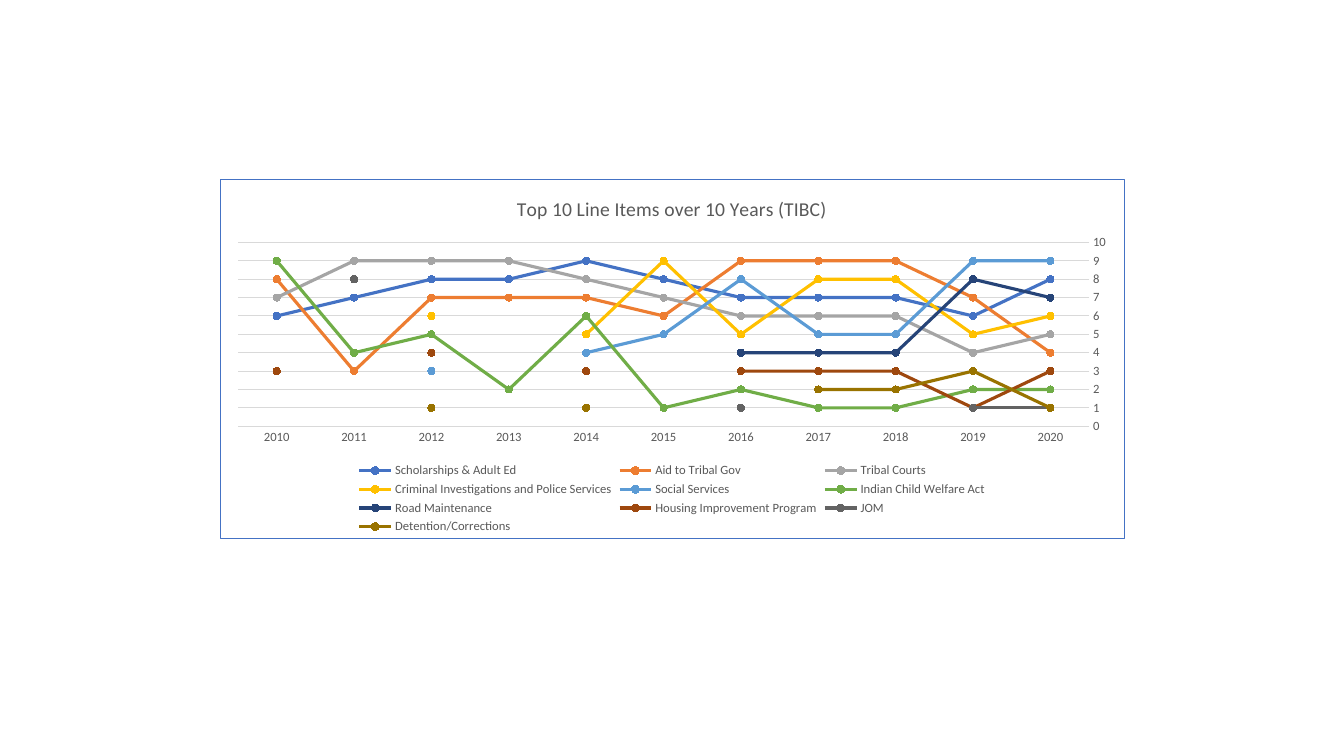
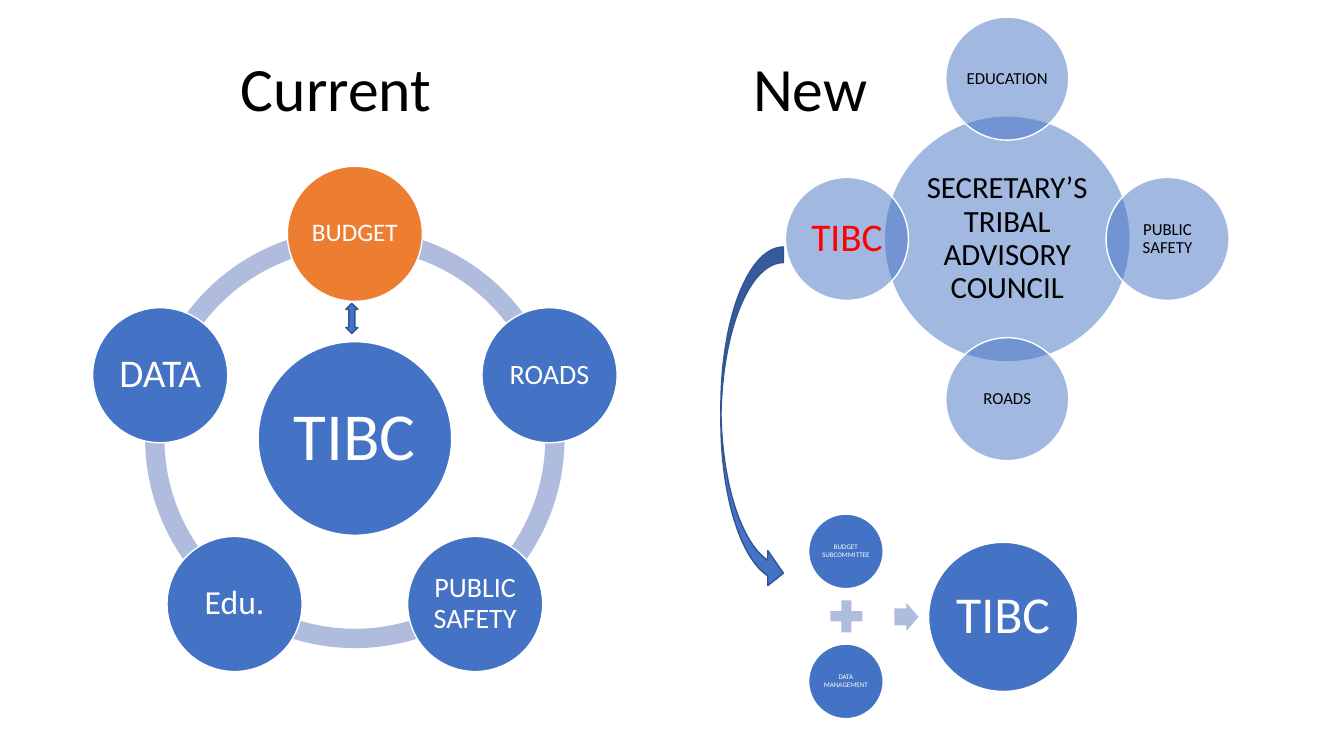
import math
import lxml.etree
import pptx
import pptx.chart.data
import pptx.dml.color
import pptx.enum.chart
import pptx.enum.shapes
import pptx.enum.text
import pptx.oxml
import pptx.oxml.ns
import pptx.util

Inches = pptx.util.Inches
Pt = pptx.util.Pt
RGBColor = pptx.dml.color.RGBColor
MSO_SHAPE = pptx.enum.shapes.MSO_SHAPE
qn = pptx.oxml.ns.qn

FONT = "Calibri"
WHITE = RGBColor(0xFF, 0xFF, 0xFF)
BLACK = RGBColor(0x00, 0x00, 0x00)
RED = RGBColor(0xFF, 0x00, 0x00)
BLUE = RGBColor(0x44, 0x72, 0xC4)
DARK_BLUE = RGBColor(0x32, 0x54, 0x91)
PALE_BLUE = RGBColor(0xB0, 0xBC, 0xDE)
ORANGE = RGBColor(0xED, 0x7D, 0x31)
GRAY = RGBColor(0xA5, 0xA5, 0xA5)
GOLD = RGBColor(0xFF, 0xC0, 0x00)
SKY = RGBColor(0x5B, 0x9B, 0xD5)
GREEN = RGBColor(0x70, 0xAD, 0x47)
NAVY = RGBColor(0x26, 0x44, 0x78)
BROWN = RGBColor(0x9E, 0x48, 0x0E)
DARK_GRAY = RGBColor(0x63, 0x63, 0x63)
OLIVE = RGBColor(0x99, 0x73, 0x00)
TEXT_GRAY = RGBColor(0x59, 0x59, 0x59)
GRID_GRAY = RGBColor(0xD9, 0xD9, 0xD9)


def add_shape(shapes, kind, left, top, width, height, fill, line=None, adj=()):
    sp = shapes.add_shape(kind, Inches(left), Inches(top), Inches(width), Inches(height))
    sp.shadow.inherit = False
    sp.fill.solid()
    sp.fill.fore_color.rgb = fill
    if line is None:
        sp.line.fill.background()
    else:
        sp.line.color.rgb = line
        sp.line.width = Pt(1)
    for i, value in enumerate(adj):
        sp.adjustments[i] = value
    return sp


def add_circle(shapes, cx, cy, d, text, size, inset, color=WHITE, fill=BLUE, alpha=None):
    sp = add_shape(shapes, MSO_SHAPE.OVAL, cx - d / 2, cy - d / 2, d, d, fill, WHITE)
    if alpha is not None:
        clr = sp._element.spPr.find(qn("a:solidFill")).find(qn("a:srgbClr"))
        lxml.etree.SubElement(clr, qn("a:alpha")).set("val", str(alpha * 1000))
    tf = sp.text_frame
    tf.word_wrap = True
    tf.vertical_anchor = pptx.enum.text.MSO_ANCHOR.MIDDLE
    tf.margin_left = tf.margin_right = tf.margin_top = tf.margin_bottom = Inches(inset)
    p = tf.paragraphs[0]
    p.text = text
    p.alignment = pptx.enum.text.PP_ALIGN.CENTER
    p.line_spacing = 0.9
    p.font.name = FONT
    p.font.size = Pt(size)
    p.font.color.rgb = color


prs = pptx.Presentation()
prs.slide_width = Inches(13.33)
prs.slide_height = Inches(7.5)

# Slide 1: line chart
s = prs.slides.add_slide(prs.slide_layouts[6])
series_rows = [
    ("Scholarships & Adult Ed", BLUE, (8, 6, 7, 7, 7, 8, 9, 8, 8, 7, 6)),
    ("Aid to Tribal Gov", ORANGE, (4, 7, 9, 9, 9, 6, 7, 7, 7, 3, 8)),
    ("Tribal Courts", GRAY, (5, 4, 6, 6, 6, 7, 8, 9, 9, 9, 7)),
    ("Criminal Investigations and Police Services", GOLD,
     (6, 5, 8, 8, 5, 9, 5, None, 6, None, None)),
    ("Social Services", SKY, (9, 9, 5, 5, 8, 5, 4, None, 3, None, None)),
    ("Indian Child Welfare Act", GREEN, (2, 2, 1, 1, 2, 1, 6, 2, 5, 4, 9)),
    ("Road Maintenance", NAVY, (7, 8, 4, 4, 4, None, 1, None, None, None, None)),
    ("Housing Improvement Program", BROWN, (3, 1, 3, 3, 3, None, 3, None, 4, None, 3)),
    ("JOM", DARK_GRAY, (1, 1, None, None, 1, None, None, None, None, 8, None)),
    ("Detention/Corrections", OLIVE, (1, 3, 2, 2, None, None, 1, None, 1, None, None)),
]
data = pptx.chart.data.CategoryChartData()
data.categories = [str(year) for year in range(2020, 2009, -1)]
for name, color, values in series_rows:
    data.add_series(name, values)
chart = s.shapes.add_chart(
    pptx.enum.chart.XL_CHART_TYPE.LINE_MARKERS,
    Inches(2.18), Inches(1.78), Inches(8.97), Inches(3.56), data).chart
chart.font.name = FONT
chart.font.size = Pt(10)

chart.has_title = True
p = chart.chart_title.text_frame.paragraphs[0]
p.text = "Top 10 Line Items over 10 Years (TIBC)"
p.font.size = Pt(14)
p.font.bold = False
p.font.name = FONT
p.font.color.rgb = TEXT_GRAY
chart.chart_title.include_in_layout = False

chart.has_legend = True
chart.legend.position = pptx.enum.chart.XL_LEGEND_POSITION.BOTTOM
chart.legend.include_in_layout = False

# Axes: years run backwards, so the value axis sits on the right
cat_axis, val_axis = chart.category_axis, chart.value_axis
cat_axis.reverse_order = True
cat_axis.format.line.color.rgb = GRID_GRAY
cat_axis.format.line.width = Pt(0.75)
val_axis.minimum_scale = 0
val_axis.maximum_scale = 10
val_axis.major_unit = 1
val_axis.format.line.fill.background()
val_axis.major_gridlines.format.line.color.rgb = GRID_GRAY
val_axis.major_gridlines.format.line.width = Pt(0.75)
for axis in (cat_axis, val_axis):
    axis.major_tick_mark = pptx.enum.chart.XL_TICK_MARK.NONE
for font in (cat_axis.tick_labels.font, val_axis.tick_labels.font, chart.legend.font):
    font.name = FONT
    font.size = Pt(9)
    font.color.rgb = TEXT_GRAY

chart.plots[0].vary_by_categories = False
for ser, (name, color, values) in zip(chart.plots[0].series, series_rows):
    ser.smooth = False
    ser.format.line.color.rgb = color
    ser.format.line.width = Pt(2.25)
    ser.marker.style = pptx.enum.chart.XL_MARKER_STYLE.CIRCLE
    ser.marker.size = 5
    ser.marker.format.fill.solid()
    ser.marker.format.fill.fore_color.rgb = color
    ser.marker.format.line.color.rgb = color

# Chart background and border
frame = pptx.oxml.parse_xml(
    '<c:spPr xmlns:c="http://schemas.openxmlformats.org/drawingml/2006/chart" '
    'xmlns:a="http://schemas.openxmlformats.org/drawingml/2006/main">'
    f'<a:solidFill><a:srgbClr val="{WHITE}"/></a:solidFill>'
    f'<a:ln w="{Pt(0.25)}"><a:solidFill><a:srgbClr val="{BLUE}"/></a:solidFill></a:ln>'
    '</c:spPr>')
chart._chartSpace.find(qn("c:chart")).addnext(frame)

# Slide 2: current and new structure
s = prs.slides.add_slide(prs.slide_layouts[5])

# Current: five nodes on a ring around the council
ring = s.shapes.add_group_shape().shapes
ring_x, ring_y, ring_d, node_radius = 3.52, 4.35, 4.16, 2.03
nodes = [
    ("BUDGET", 18, 0.03, ORANGE),
    ("ROADS", 20, 0.03, BLUE),
    ("PUBLIC SAFETY", 20, 0.03, BLUE),
    ("Edu.", 24, 0.03, BLUE),
    ("DATA", 28, 0.04, BLUE),
]
angles = [(270 + 72 * i) % 360 for i in range(len(nodes))]
for angle in angles:
    # Adjustments count 60000ths of a degree in units of 100000
    add_shape(ring, MSO_SHAPE.BLOCK_ARC, ring_x - ring_d / 2, ring_y - ring_d / 2,
              ring_d, ring_d, PALE_BLUE,
              adj=(angle * 0.6, (angle + 72) % 360 * 0.6, 0.046))
add_circle(ring, ring_x, ring_y, 1.92, "TIBC", 48, 0.07)
for angle, (text, size, inset, fill) in zip(angles, nodes):
    add_circle(ring, ring_x + node_radius * math.cos(math.radians(angle)),
               ring_y + node_radius * math.sin(math.radians(angle)),
               1.34, text, size, inset, fill=fill)
add_shape(s.shapes, MSO_SHAPE.UP_DOWN_ARROW, 3.43, 3.01, 0.12, 0.3, BLUE, DARK_BLUE)

# New: advisory council with four overlapping circles
hub = s.shapes.add_group_shape().shapes
hub_x, hub_y, reach = 9.99, 2.37, 1.59
add_circle(hub, hub_x, hub_y, 2.44, "SECRETARY’S TRIBAL ADVISORY COUNCIL", 22, 0.03,
           BLACK, alpha=50)
for dx, dy, text, size, inset, color in [
    (0, -1, "EDUCATION", 12, 0.02, BLACK),
    (1, 0, "PUBLIC SAFETY", 12, 0.02, BLACK),
    (0, 1, "ROADS", 12, 0.02, BLACK),
    (-1, 0, "TIBC", 28, 0.04, RED),
]:
    add_circle(hub, hub_x + dx * reach, hub_y + dy * reach, 1.22, text, size, inset,
               color, alpha=50)

# New: two parts add up to the council
total = s.shapes.add_group_shape().shapes
add_circle(total, 8.39, 5.47, 0.74, "BUDGET SUBCOMMITTEE", 5, 0.01)
add_shape(total, MSO_SHAPE.MATH_PLUS, 8.18, 5.9, 0.43, 0.43, PALE_BLUE)
add_circle(total, 8.39, 6.76, 0.74, "DATA MANAGEMENT", 5, 0.01)
add_shape(total, MSO_SHAPE.RIGHT_ARROW, 8.87, 5.98, 0.24, 0.28, PALE_BLUE, adj=(0.6, 0.5))
add_circle(total, 9.95, 6.12, 1.48, "TIBC", 37, 0.05)

# Headings
new_heading = s.shapes.add_textbox(0, 0, 0, 0)
for sp, text, left in ((s.shapes.title, "Current", 2.29), (new_heading, "New", 7.37)):
    sp.left, sp.top, sp.width, sp.height = Inches(left), Inches(0.47), Inches(2.51), Inches(0.87)
    tf = sp.text_frame
    tf.word_wrap = True
    tf.vertical_anchor = pptx.enum.text.MSO_ANCHOR.MIDDLE
    p = tf.paragraphs[0]
    p.text = text
    p.alignment = pptx.enum.text.PP_ALIGN.LEFT
    p.line_spacing = 0.9
    p.font.name = FONT
    p.font.size = Pt(44)
    p.font.color.rgb = BLACK

# Link from the council circle to its parts
add_shape(s.shapes, MSO_SHAPE.CURVED_RIGHT_ARROW, 7.15, 2.45, 0.62, 3.41, BLUE, DARK_BLUE,
          adj=(0.25, 0.56, 0.25))

prs.save("out.pptx")
